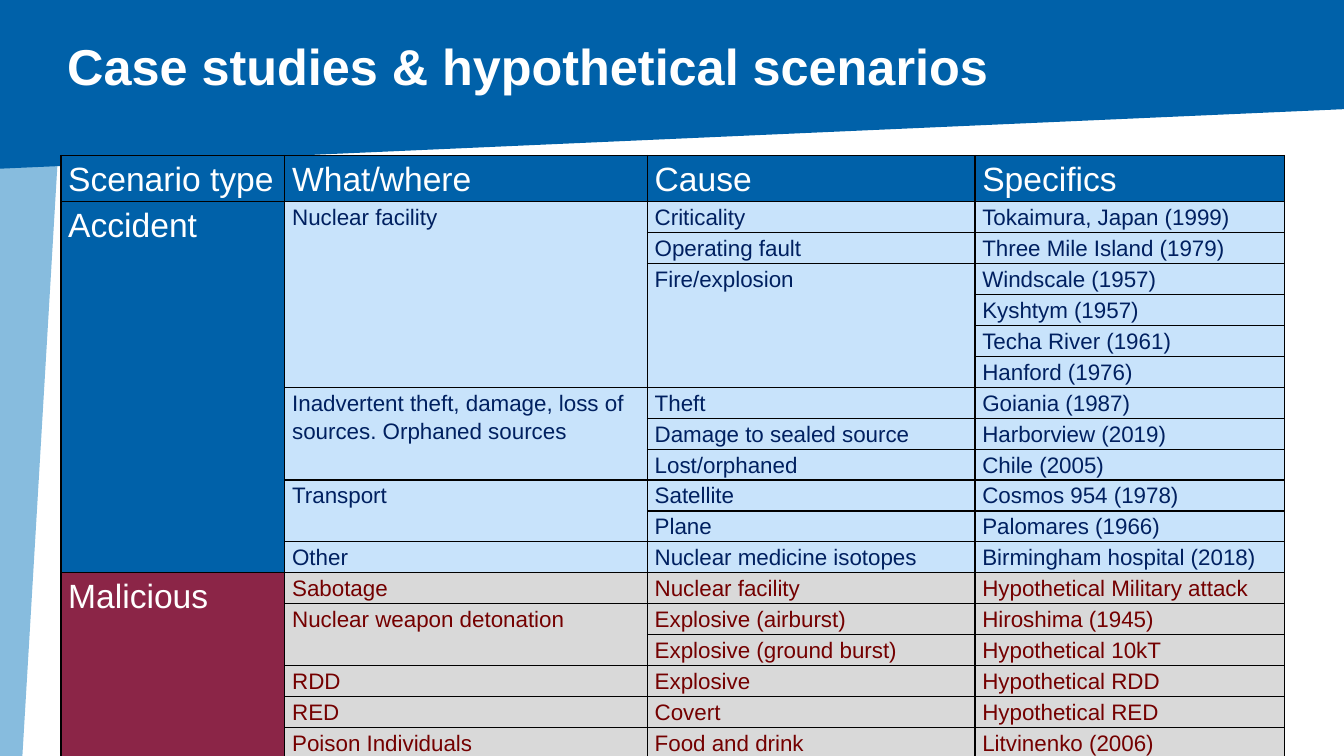
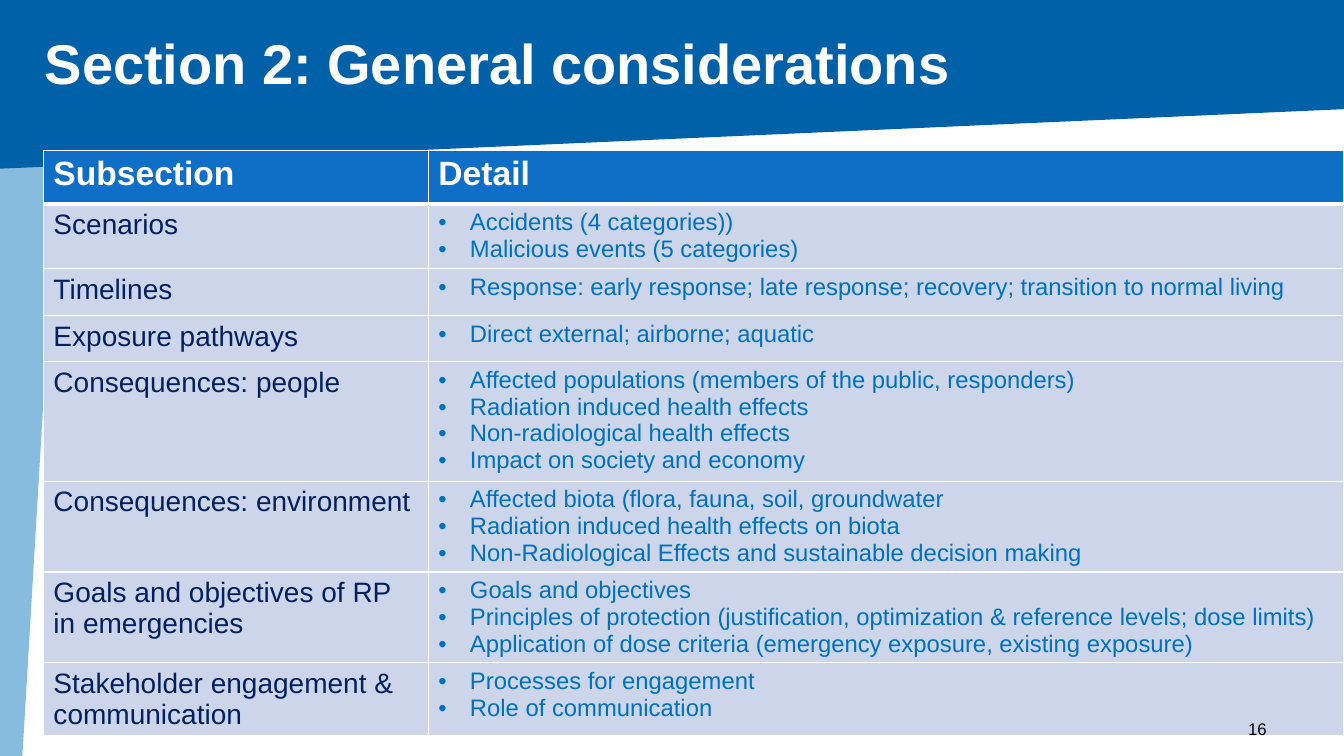
import dataclasses
import typing

import lxml.etree
import pptx
import pptx.dml.color
import pptx.enum.text
import pptx.oxml.ns
import pptx.shapes.autoshape
import pptx.slide
import pptx.table
import pptx.util

Pt = pptx.util.Pt
qn = pptx.oxml.ns.qn


# Theme: colours and type sizes
@dataclasses.dataclass(frozen=True)
class Theme:
    face: str = "Arial"
    white: str = "FFFFFF"
    black: str = "000000"
    blue: str = "0061A9"
    pale: str = "87BCDE"
    navy: str = "002060"
    sky: str = "C8E3FB"
    wine: str = "8B2547"
    red: str = "740000"
    gray: str = "D9D9D9"
    head: str = "0F6FC6"
    row: str = "CCD5EA"
    link: str = "0070C0"
    small: float = 12
    cell: float = 16
    point: float = 17
    topic: float = 20
    label: float = 24
    title: float = 36
    large: float = 40


T = Theme()


@dataclasses.dataclass(frozen=True)
class Style:
    size: float
    ink: str
    bold: bool = False
    fill: str = ""
    mark: bool = False
    lead: float | None = None


@dataclasses.dataclass(frozen=True)
class Frame:
    left: float
    top: float
    width: float
    height: float


@dataclasses.dataclass(frozen=True)
class Grid:
    left: float
    top: float
    cols: tuple[float, ...]
    rows: tuple[float, ...]
    pad: tuple[float, float]
    edge: str
    rule: float = 1


@dataclasses.dataclass(frozen=True)
class Group:
    name: str
    side: Style
    body: Style
    rows: tuple[tuple[str, str, str], ...]


# Styles
HEAD = Style(T.label, T.white, fill=T.blue, lead=1.15)
WINE = dataclasses.replace(HEAD, fill=T.wine)
SKY = Style(T.cell, T.navy, fill=T.sky, lead=1.15)
GRAY = Style(T.cell, T.red, fill=T.gray, lead=1.15)
BOLD = Style(T.label, T.white, bold=True, fill=T.head)
TOPIC = Style(T.topic, T.navy, fill=T.row)
POINT = Style(T.point, T.link, fill=T.row, mark=True)

# Scenario rows; an empty string joins the cell above
CASES = (
    Group("Accident", HEAD, SKY, (
        ("Nuclear facility", "Criticality", "Tokaimura, Japan (1999)"),
        ("", "Operating fault", "Three Mile Island (1979)"),
        ("", "Fire/explosion", "Windscale (1957)"),
        ("", "", "Kyshtym (1957)"),
        ("", "", "Techa River (1961)"),
        ("", "", "Hanford (1976)"),
        ("Inadvertent theft, damage, loss of sources. Orphaned sources",
         "Theft", "Goiania (1987)"),
        ("", "Damage to sealed source", "Harborview (2019)"),
        ("", "Lost/orphaned", "Chile (2005)"),
        ("Transport", "Satellite", "Cosmos 954 (1978)"),
        ("", "Plane", "Palomares (1966)"),
        ("Other", "Nuclear medicine isotopes", "Birmingham hospital (2018)"),
    )),
    Group("Malicious", WINE, GRAY, (
        ("Sabotage", "Nuclear facility", "Hypothetical Military attack"),
        ("Nuclear weapon detonation", "Explosive (airburst)", "Hiroshima (1945)"),
        ("", "Explosive (ground burst)", "Hypothetical 10kT"),
        ("RDD", "Explosive", "Hypothetical RDD"),
        ("RED", "Covert", "Hypothetical RED"),
        ("Poison Individuals", "Food and drink", "Litvinenko (2006)"),
    )),
)

TOPICS = (
    ("Scenarios", ("Accidents (4 categories))", "Malicious events (5 categories)")),
    ("Timelines", (
        "Response: early response; late response; recovery; transition to normal living",)),
    ("Exposure pathways", ("Direct external; airborne; aquatic",)),
    ("Consequences: people", (
        "Affected populations (members of the public, responders)",
        "Radiation induced health effects",
        "Non-radiological health effects",
        "Impact on society and economy")),
    ("Consequences: environment", (
        "Affected biota (flora, fauna, soil, groundwater",
        "Radiation induced health effects on biota",
        "Non-Radiological Effects and sustainable decision making")),
    ("Goals and objectives of RP in emergencies", (
        "Goals and objectives",
        "Principles of protection (justification, optimization & reference levels; dose limits)",
        "Application of dose criteria (emergency exposure, existing exposure)")),
    ("Stakeholder engagement & communication", (
        "Processes for engagement", "Role of communication")),
)


def rgb(code: str) -> pptx.dml.color.RGBColor:
    return pptx.dml.color.RGBColor.from_string(code)


def apply(item: typing.Any, form: dict[str, typing.Any]) -> None:
    for name, value in form.items():
        setattr(item, name, value)


# Text
def write(frame: typing.Any, lines: typing.Sequence[str], style: Style,
          align: typing.Any = None) -> None:
    for i, line in enumerate(lines):
        para = frame.add_paragraph() if i else frame.paragraphs[0]
        apply(para, {"line_spacing": style.lead, "alignment": align})
        if style.mark:
            props = para._p.get_or_add_pPr()
            props.set("marL", str(Pt(22.5)))
            props.set("indent", str(-Pt(22.5)))
            for tag, key, value in (("a:buFont", "typeface", T.face),
                                    ("a:buChar", "char", "•")):
                lxml.etree.SubElement(props, qn(tag)).set(key, value)
        run = para.add_run()
        run.text = line
        for font in (para.font, run.font):
            apply(font, {"name": T.face, "size": Pt(style.size), "bold": style.bold})
        run.font.color.rgb = rgb(style.ink)


def label(slide: pptx.slide.Slide, text: str, box: Frame, style: Style,
          form: dict[str, typing.Any], align: typing.Any = None) -> None:
    shape = slide.shapes.add_textbox(*map(Pt, dataclasses.astuple(box)))
    apply(shape.text_frame, {"word_wrap": True, **form})
    write(shape.text_frame, [text], style, align)


def title(slide: pptx.slide.Slide, text: str, box: Frame, size: float) -> None:
    label(slide, text, box, Style(size, T.white, bold=True), {
        "margin_left": 0, "margin_right": 0, "margin_top": Pt(3.6), "margin_bottom": 0,
        "vertical_anchor": pptx.enum.text.MSO_ANCHOR.MIDDLE})


# Shared backdrop: side wedge and top band
def wedge(slide: pptx.slide.Slide, spots: typing.Sequence[tuple[float, float]],
          fill: str) -> pptx.shapes.autoshape.Shape:
    ends = [(Pt(x), Pt(y)) for x, y in spots]
    pen = slide.shapes.build_freeform(*ends[0], scale=1.0)
    pen.add_line_segments(ends[1:], close=True)
    shape = pen.convert_to_shape()
    shape.shadow.inherit = False
    shape.fill.solid()
    shape.fill.fore_color.rgb = rgb(fill)
    shape.line.fill.background()
    return shape


def start(deck: typing.Any) -> pptx.slide.Slide:
    slide = deck.slides.add_slide(deck.slide_layouts[6])
    wedge(slide, [(0, 0), (48, 0), (16, 540), (0, 540)], T.pale)
    band = wedge(slide, [(0, 0), (960, 0), (960, 77), (0, 119.5)], T.blue)
    band.line.color.rgb = rgb(T.blue)
    band.line.width = Pt(2)
    return slide


# Tables
def border(cell: pptx.table._Cell, ink: str, tops: float, base: float) -> None:
    props = cell._tc.get_or_add_tcPr()
    for i, (side, width) in enumerate(zip("LRTB", (1, 1, tops, base))):
        line = lxml.etree.Element(qn(f"a:ln{side}"), w=str(Pt(width)))
        fill = lxml.etree.SubElement(line, qn("a:solidFill"))
        lxml.etree.SubElement(fill, qn("a:srgbClr")).set("val", ink)
        props.insert(i, line)


def table(slide: pptx.slide.Slide, grid: Grid) -> pptx.table.Table:
    size = (grid.left, grid.top, sum(grid.cols), sum(grid.rows))
    made = slide.shapes.add_table(len(grid.rows), len(grid.cols), *map(Pt, size)).table
    apply(made, {"first_row": False, "horz_banding": False})
    for col, width in zip(made.columns, grid.cols):
        col.width = Pt(width)
    for row, height in zip(made.rows, grid.rows):
        row.height = Pt(height)
    return made


def fill(made: pptx.table.Table, grid: Grid, r: int, c: int,
         lines: typing.Sequence[str], style: Style) -> None:
    cell = made.cell(r, c)
    side, top = map(Pt, grid.pad)
    apply(cell, {"margin_left": side, "margin_right": side,
                 "margin_top": top, "margin_bottom": 0})
    cell.fill.solid()
    cell.fill.fore_color.rgb = rgb(style.fill)
    border(cell, grid.edge, grid.rule if r == 1 else 1, grid.rule if r == 0 else 1)
    if any(lines):
        write(cell.text_frame, lines, style)


def join(made: pptx.table.Table, col: int, texts: typing.Sequence[str]) -> None:
    heads = [r for r, text in enumerate(texts) if text] + [len(texts)]
    for first, last in zip(heads, heads[1:]):
        if last - first > 1:
            made.cell(first, col).merge(made.cell(last - 1, col))


# Slides
def cases(deck: typing.Any) -> None:
    slide = start(deck)
    title(slide, "Case studies & hypothetical scenarios", Frame(48, 0, 880, 90), T.title)
    rows = [(("Scenario type", "What/where", "Cause", "Specifics"), HEAD, HEAD)]
    for group in CASES:
        for i, texts in enumerate(group.rows):
            rows.append((("" if i else group.name, *texts), group.side, group.body))
    grid = Grid(43.5, 111, (160, 259, 234, 221), (33,) + (22,) * (len(rows) - 1),
                (5.2, 0), T.black)
    made = table(slide, grid)
    for r, (texts, side, body) in enumerate(rows):
        for c, text in enumerate(texts):
            fill(made, grid, r, c, [text], body if c else side)
    for c in range(len(grid.cols)):
        join(made, c, [texts[c] for texts, _, _ in rows])


def topics(deck: typing.Any) -> None:
    slide = start(deck)
    grid = Grid(31, 107.5, (275, 654), (38, 46.5, 33.5, 33, 83.5, 64, 64, 52),
                (7.2, 3.6), T.white, 3)
    made = table(slide, grid)
    for c, text in enumerate(("Subsection", "Detail")):
        fill(made, grid, 0, c, [text], BOLD)
    for r, (name, points) in enumerate(TOPICS, 1):
        fill(made, grid, r, 0, [name], TOPIC)
        fill(made, grid, r, 1, points, POINT)
    label(slide, "16", Frame(832, 510, 80, 17), Style(T.small, T.black), {},
          pptx.enum.text.PP_ALIGN.RIGHT)
    title(slide, "Section 2: General considerations", Frame(32, -2.5, 864, 90), T.large)


def main() -> None:
    deck = pptx.Presentation()
    apply(deck, {"slide_width": Pt(960), "slide_height": Pt(540)})
    cases(deck)
    topics(deck)
    deck.save("out.pptx")


if __name__ == "__main__":
    main()
